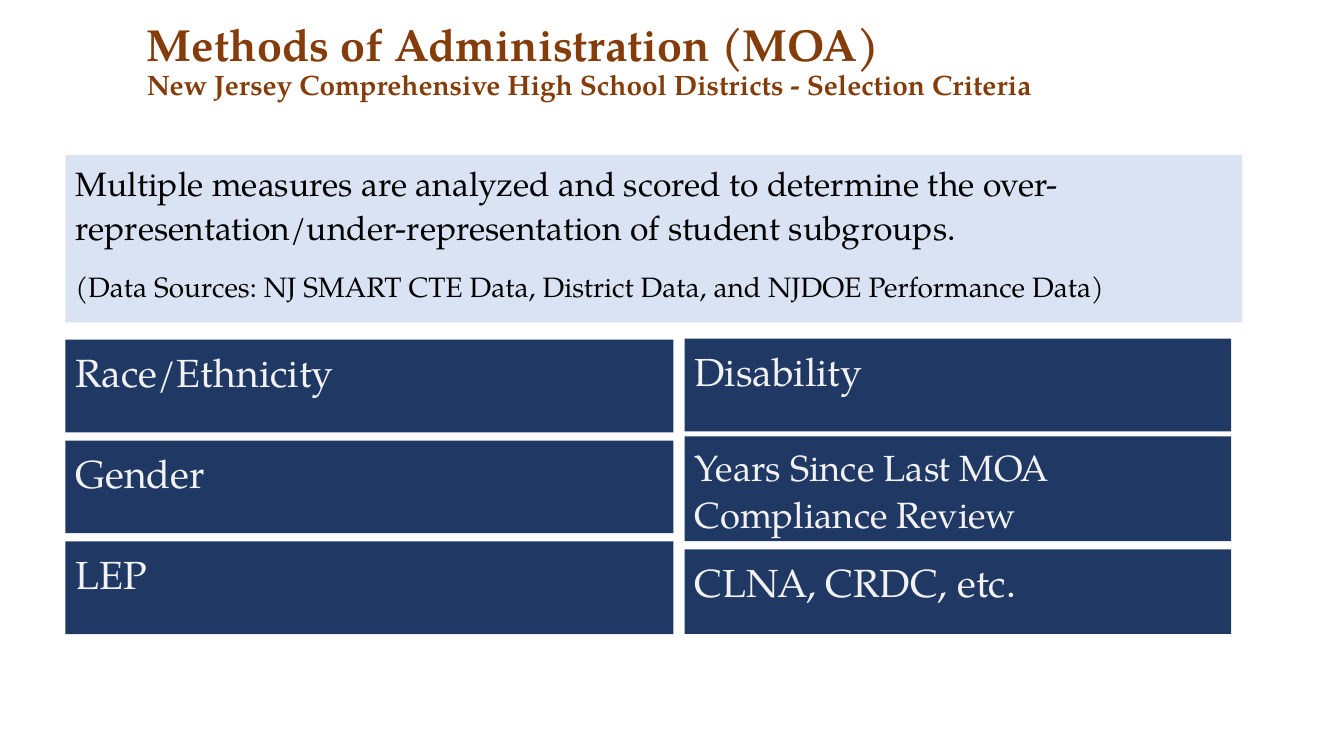
from pptx import Presentation
from pptx.dml.color import RGBColor
from pptx.enum.shapes import MSO_SHAPE
from pptx.enum.text import MSO_ANCHOR, PP_ALIGN
from pptx.util import Inches, Pt

FONT = "TeX Gyre Pagella"
BROWN, PALE_BLUE, NAVY = "843C0B", "DAE3F3", "203864"
BLACK, OFF_WHITE = "000000", "F2F2F2"
LEFT = 0.65
MEASURE_COLUMNS = [
    # left, width, rows of (top, height, wording, text size)
    (LEFT, 6.03, [(3.37 + i, 0.92, wording, 28)
                  for i, wording in enumerate(["Race/Ethnicity", "Gender", "LEP"])]),
    (6.79, 5.42, [(3.36, 0.92, "Disability", 28),
                  (4.33, 1.04, "Years Since Last MOA Compliance Review", 26),
                  (5.45, 0.84, "CLNA, CRDC, etc.", 28)]),
]


def color(hex_value):
    return RGBColor.from_string(hex_value)


def set_format(target, values):
    for name, value in values.items():
        setattr(target, name, value)


def add_run(paragraph, wording, size, ink, bold=False):
    run = paragraph.add_run()
    run.text = wording
    set_format(run.font, {"name": FONT, "size": Pt(size), "bold": bold})
    run.font.color.rgb = color(ink)


def add_title(slide, box):
    frame = slide.shapes.add_textbox(*map(Inches, box)).text_frame
    set_format(frame, {"word_wrap": True, "vertical_anchor": MSO_ANCHOR.MIDDLE})
    heading = frame.paragraphs[0]
    heading.line_spacing = 0.9
    add_run(heading, "Methods of Administration (MOA)", 32, BROWN, True)
    heading.add_line_break()
    add_run(heading, "New Jersey Comprehensive High School Districts - Selection Criteria",
            20, BROWN, True)


def add_panel(slide, box, fill, ink, lines, right_inset=0.9):
    """Draw a filled rectangle with one paragraph per (wording, size) line."""
    panel = slide.shapes.add_shape(MSO_SHAPE.RECTANGLE, *map(Inches, box))
    panel.shadow.inherit = False
    panel.fill.solid()
    panel.fill.fore_color.rgb = color(fill)
    panel.line.fill.background()
    frame = panel.text_frame
    set_format(frame, {"word_wrap": True, "vertical_anchor": MSO_ANCHOR.TOP,
                       "margin_right": Inches(right_inset)})
    for i, (wording, size) in enumerate(lines):
        paragraph = frame.add_paragraph() if i else frame.paragraphs[0]
        set_format(paragraph, {"alignment": PP_ALIGN.LEFT, "line_spacing": 1.08,
                               "space_after": Pt(14)})
        add_run(paragraph, wording, size, ink)


def add_measures(slide):
    for left, width, rows in MEASURE_COLUMNS:
        for top, height, wording, size in rows:
            add_panel(slide, (left, top, width, height), NAVY, OFF_WHITE, [(wording, size)])


def main():
    deck = Presentation()
    set_format(deck, {"slide_width": Inches(13.33), "slide_height": Inches(7.5)})
    slide = deck.slides.add_slide(deck.slide_layouts[6])
    add_title(slide, (1.36, 0.21, 10.56, 0.82))
    add_panel(slide, (LEFT, 1.54, 11.67, 1.66), PALE_BLUE, BLACK, [
        ("Multiple measures are analyzed and scored to determine the "
         "over-representation/under-representation of student subgroups.", 24),
        ("(Data Sources: NJ SMART CTE Data, District Data, and NJDOE Performance Data)", 20),
    ])
    add_measures(slide)
    deck.save("out.pptx")


if __name__ == "__main__":
    main()
